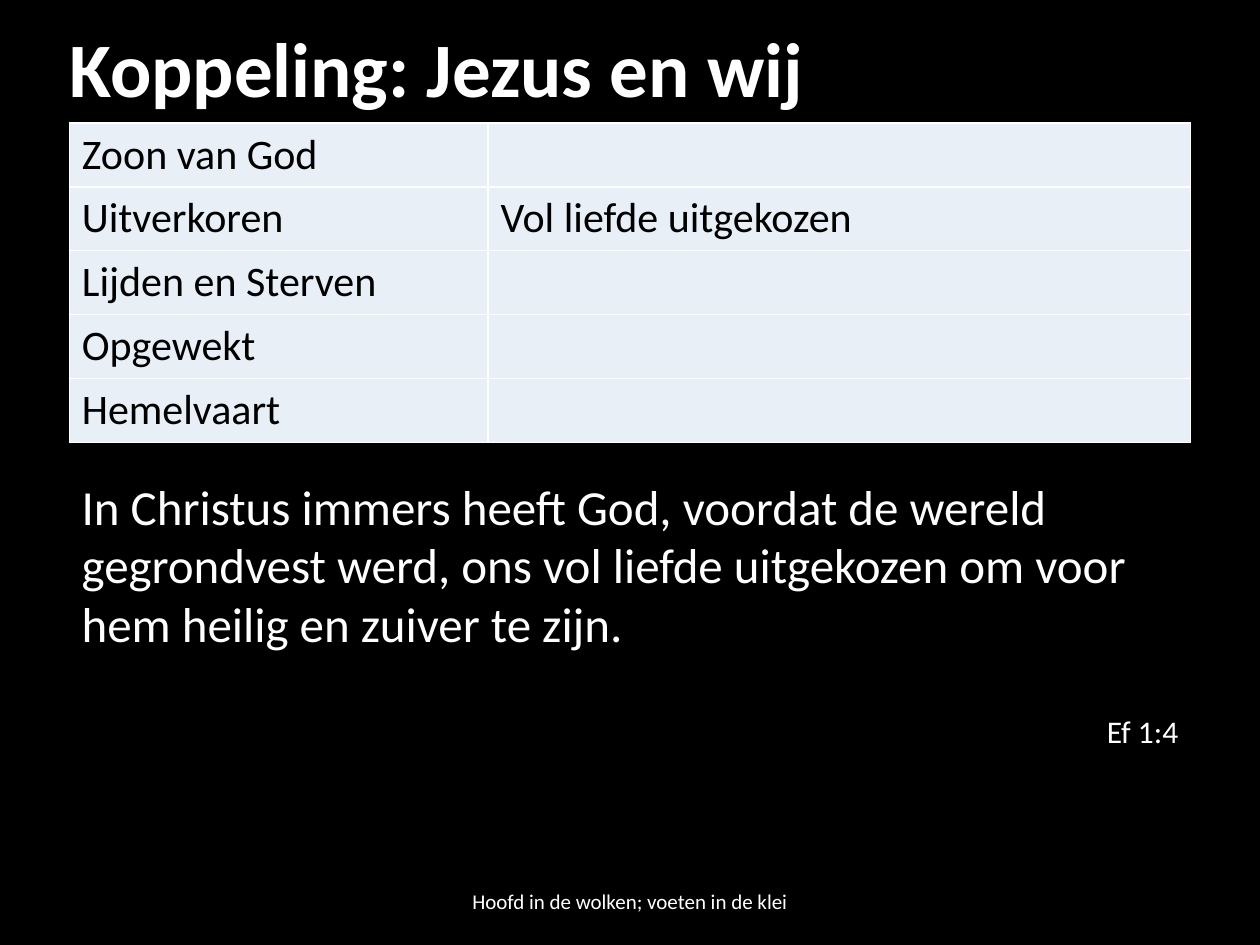
"""Build the slide that links Jesus and us, with a table and a verse."""
import dataclasses

import lxml.etree
import pptx
import pptx.dml.color
import pptx.enum.text
import pptx.oxml.ns
import pptx.util

ALIGN = pptx.enum.text.PP_ALIGN
ANCHOR = pptx.enum.text.MSO_ANCHOR


@dataclasses.dataclass(frozen=True)
class Theme:
    """Hold the colours, the font and the type sizes."""
    back: str = "000000"
    light: str = "FFFFFF"
    dark: str = "000000"
    cell: str = "E8EFF6"
    font: str = "Calibri"
    title: int = 44
    verse: int = 28
    table: int = 24
    source: int = 18
    foot: int = 12
    gap: int = 34
    line: int = 1


THEME = Theme()
WIDE, HIGH = pptx.util.Inches(10), pptx.util.Inches(7.5)
ROWS = [
    ("Zoon van God", ""),
    ("Uitverkoren", "Vol liefde uitgekozen"),
    ("Lijden en Sterven", ""),
    ("Opgewekt", ""),
    ("Hemelvaart", ""),
]
VERSE = ("In Christus immers heeft God, voordat de wereld gegrondvest werd, "
         "ons vol liefde uitgekozen om voor hem heilig en zuiver te zijn.")


def share(left, top, width, height):
    """Turn percentages of the slide into lengths."""
    return (int(WIDE * left / 100), int(HIGH * top / 100),
            int(WIDE * width / 100), int(HIGH * height / 100))


def paint(fill, tint):
    """Give a fill one solid colour."""
    fill.solid()
    fill.fore_color.rgb = pptx.dml.color.RGBColor.from_string(tint)


def write(para, text, size, tint=THEME.light, align=ALIGN.LEFT, bold=False):
    """Add one formatted run to a paragraph."""
    para.alignment = align
    run = para.add_run()
    run.text = text
    font = run.font
    font.name, font.size, font.bold = THEME.font, pptx.util.Pt(size), bold
    font.color.rgb = pptx.dml.color.RGBColor.from_string(tint)


def add_title(slide, text, place):
    """Move and fill the title placeholder."""
    title = slide.shapes.title
    title.left, title.top, title.width, title.height = place
    frame = title.text_frame
    frame.vertical_anchor = ANCHOR.MIDDLE
    para = frame.paragraphs[0]
    para.line_spacing = 0.9
    write(para, text, THEME.title, bold=True)


def add_box(slide, place, anchor=ANCHOR.TOP):
    """Add a wrapping text box and return its frame."""
    frame = slide.shapes.add_textbox(*place).text_frame
    frame.word_wrap = True
    frame.vertical_anchor = anchor
    return frame


def add_edges(cell):
    """Draw a thin line on all sides of a cell."""
    props = cell._tc.get_or_add_tcPr()
    name = pptx.oxml.ns.qn
    for spot, side in enumerate(("a:lnL", "a:lnR", "a:lnT", "a:lnB")):
        edge = lxml.etree.Element(name(side), w=str(pptx.util.Pt(THEME.line)))
        fill = lxml.etree.SubElement(edge, name("a:solidFill"))
        lxml.etree.SubElement(fill, name("a:srgbClr"), val=THEME.light)
        props.insert(spot, edge)


def add_grid(slide, rows, place, split):
    """Add a two-column table with equal rows."""
    grid = slide.shapes.add_table(len(rows), 2, *place).table
    grid.first_row = grid.horz_banding = False
    grid.columns[0].width = int(place[2] * split)
    grid.columns[1].width = place[2] - grid.columns[0].width
    for row, texts in enumerate(rows):
        for col, text in enumerate(texts):
            cell = grid.cell(row, col)
            paint(cell.fill, THEME.cell)
            add_edges(cell)
            if text:
                write(cell.text_frame.paragraphs[0], text, THEME.table, THEME.dark)


def main():
    """Build and save the slide."""
    deck = pptx.Presentation()
    deck.slide_width, deck.slide_height = WIDE, HIGH
    slide = deck.slides.add_slide(deck.slide_layouts[5])
    paint(slide.background.fill, THEME.back)

    add_title(slide, "Koppeling: Jezus en wij", share(4.5, 2.5, 88.6, 10.4))
    add_grid(slide, ROWS, share(5.5, 13, 89, 33.8), 0.37 + 0.1 / 30)

    foot = add_box(slide, share(33.1, 92.67, 33.8, 5.33), ANCHOR.MIDDLE)
    write(foot.paragraphs[0], "Hoofd in de wolken; voeten in de klei",
          THEME.foot, align=ALIGN.CENTER)

    verse = add_box(slide, share(5.5, 49.73, 89, 30.53))
    write(verse.paragraphs[0], VERSE, THEME.verse)
    source = verse.add_paragraph()
    source.space_before = pptx.util.Pt(THEME.gap)
    write(source, "Ef 1:4", THEME.source, align=ALIGN.RIGHT)

    deck.save("out.pptx")


if __name__ == "__main__":
    main()
